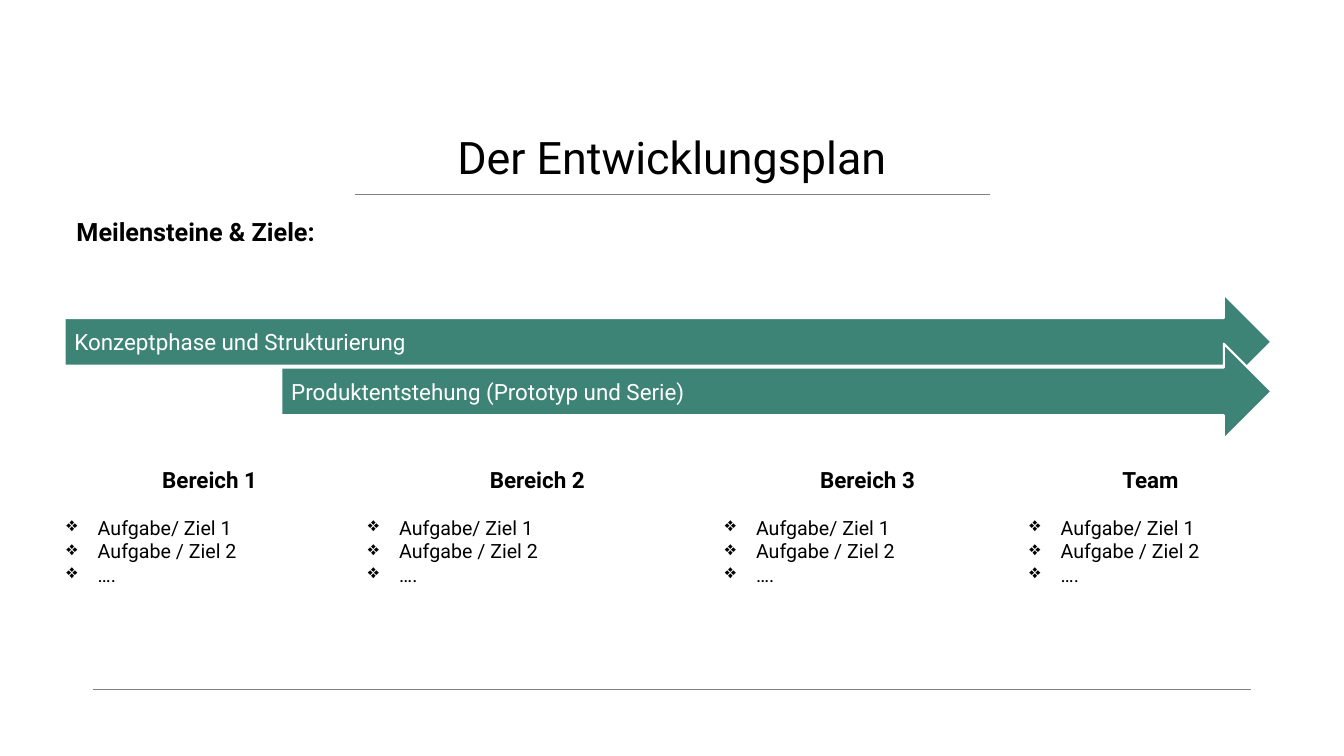
from dataclasses import dataclass

from lxml import etree
from pptx import Presentation
from pptx.dml.color import RGBColor
from pptx.enum.shapes import MSO_CONNECTOR, MSO_SHAPE
from pptx.enum.text import MSO_ANCHOR, MSO_AUTO_SIZE, PP_ALIGN
from pptx.oxml.ns import qn
from pptx.slide import Slide
from pptx.text.text import TextFrame, _Paragraph
from pptx.util import Inches, Pt

STRAIGHT = MSO_CONNECTOR.STRAIGHT
RIGHT_ARROW = MSO_SHAPE.RIGHT_ARROW
TOP, MIDDLE = MSO_ANCHOR.TOP, MSO_ANCHOR.MIDDLE
FIXED_SIZE = MSO_AUTO_SIZE.NONE
LEFT, CENTER = PP_ALIGN.LEFT, PP_ALIGN.CENTER

SLIDE_WIDTH, SLIDE_HEIGHT = Inches(13.33), Inches(7.5)
FONT = "Roboto"
BLACK, WHITE, GREY, GREEN = "000000", "FFFFFF", "808080", "3D8477"
TASKS = ("Aufgabe/ Ziel 1", "Aufgabe / Ziel 2", "….")
BULLET_INDENT = Inches(0.31)
ARROWS_RIGHT = 94.6
ARROW_HEIGHT = 12.6
AREAS_TOP, AREAS_HEIGHT = 61.6, 16.13


@dataclass(frozen=True)
class Rule:
    left: float
    right: float
    y: float


@dataclass(frozen=True)
class Phase:
    label: str
    left: float
    top: float


@dataclass(frozen=True)
class Area:
    heading: str
    left: float
    width: float


RULES = (Rule(26.4, 73.65, 25.75), Rule(6.9, 93.1, 91.2))
PHASES = (
    Phase("Konzeptphase und Strukturierung", 4.8, 38.93),
    Phase("Produktentstehung (Prototyp und Serie)", 20.93, 45.47),
)
AREAS = (
    Area("Bereich 1", 4.95, 21.3),
    Area("Bereich 2", 27.38, 25.2),
    Area("Bereich 3", 53.93, 21.23),
    Area("Team", 76.6, 18),
)


def color(value: str) -> RGBColor:
    return RGBColor.from_string(value)


def across(percent: float) -> int:
    return round(SLIDE_WIDTH * percent / 100)


def down(percent: float) -> int:
    return round(SLIDE_HEIGHT * percent / 100)


def box(left: float, top: float, width: float, height: float) -> tuple[int, int, int, int]:
    return across(left), down(top), across(width), down(height)


def write(paragraph: _Paragraph, text: str, size: float, ink: str = BLACK,
          bold: bool = False, align: PP_ALIGN = LEFT) -> None:
    paragraph.text = text
    paragraph.alignment = align
    for run in paragraph.runs:
        run.font.name = FONT
        run.font.size = Pt(size)
        run.font.bold = bold
        run.font.color.rgb = color(ink)


def add_bullet(paragraph: _Paragraph) -> None:
    properties = paragraph._p.get_or_add_pPr()
    properties.set("marL", str(BULLET_INDENT))
    properties.set("indent", str(-BULLET_INDENT))
    etree.SubElement(properties, qn("a:buChar"), char="❖")


def add_text_frame(slide: Slide, left: float, top: float, width: float,
                   height: float) -> TextFrame:
    frame = slide.shapes.add_textbox(*box(left, top, width, height)).text_frame
    frame.word_wrap = True
    return frame


def draw_rule(slide: Slide, rule: Rule) -> None:
    line = slide.shapes.add_connector(
        STRAIGHT, across(rule.left), down(rule.y), across(rule.right), down(rule.y))
    line.line.color.rgb = color(GREY)
    line.line.width = Pt(0.25)
    etree.SubElement(line._element.spPr, qn("a:effectLst"))


def draw_title(slide: Slide) -> None:
    title = slide.shapes.title
    title.left, title.top, title.width, title.height = box(16.8, 17.33, 66.4, 6.13)
    frame = title.text_frame
    frame.auto_size = FIXED_SIZE
    frame.vertical_anchor = TOP
    heading = frame.paragraphs[0]
    write(heading, "Der Entwicklungsplan", 32, align=CENTER)
    heading.line_spacing = 0.9


def draw_area(slide: Slide, area: Area) -> None:
    frame = add_text_frame(slide, area.left, AREAS_TOP, area.width, AREAS_HEIGHT)
    frame.margin_left = frame.margin_right = frame.margin_top = frame.margin_bottom = 0
    heading = frame.paragraphs[0]
    write(heading, area.heading, 16, bold=True, align=CENTER)
    heading.space_after = Pt(16.4)
    for task in TASKS:
        entry = frame.add_paragraph()
        add_bullet(entry)
        write(entry, task, 14)


def draw_phase(slide: Slide, phase: Phase) -> None:
    arrow = slide.shapes.add_shape(RIGHT_ARROW, *box(
        phase.left, phase.top, ARROWS_RIGHT - phase.left, ARROW_HEIGHT))
    arrow.shadow.inherit = False
    arrow.fill.solid()
    arrow.fill.fore_color.rgb = color(GREEN)
    arrow.line.color.rgb = color(WHITE)
    arrow.line.width = Pt(1.5)
    arrow.text_frame.vertical_anchor = MIDDLE
    write(arrow.text_frame.paragraphs[0], phase.label, 16, WHITE)


def draw_subtitle(slide: Slide) -> None:
    subtitle = add_text_frame(slide, 4.95, 27.6, 50, 5.47).paragraphs[0]
    write(subtitle, "Meilensteine & Ziele:", 18, bold=True)
    subtitle.line_spacing = 1.1


def main() -> None:
    presentation = Presentation()
    presentation.slide_width = SLIDE_WIDTH
    presentation.slide_height = SLIDE_HEIGHT
    slide = presentation.slides.add_slide(presentation.slide_layouts.get_by_name("Title Only"))
    for rule in RULES:
        draw_rule(slide, rule)
    draw_title(slide)
    for area in AREAS:
        draw_area(slide, area)
    for phase in PHASES:
        draw_phase(slide, phase)
    draw_subtitle(slide)
    presentation.save("out.pptx")


if __name__ == "__main__":
    main()
